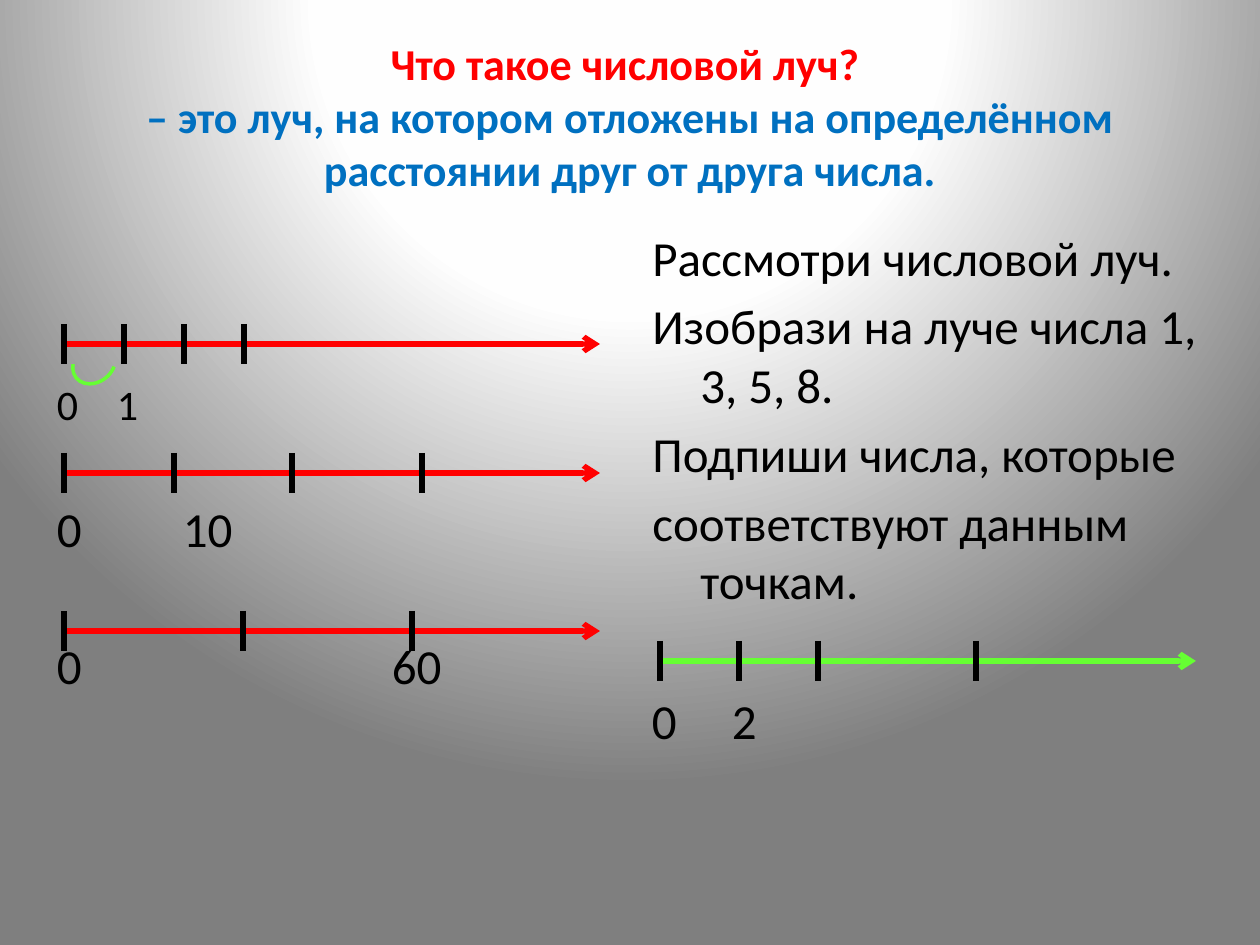
from lxml.etree import SubElement
from pptx import Presentation
from pptx.dml.color import RGBColor
from pptx.enum.shapes import MSO_CONNECTOR, MSO_SHAPE
from pptx.enum.text import MSO_ANCHOR, PP_ALIGN
from pptx.oxml import parse_xml
from pptx.oxml.ns import nsdecls, qn
from pptx.util import Emu, Pt

RED = RGBColor(0xFF, 0x00, 0x00)
BLUE = RGBColor(0x00, 0x70, 0xC0)
GREEN = RGBColor(0x66, 0xFF, 0x33)
BLACK = RGBColor(0x00, 0x00, 0x00)
FONT = "Calibri"
TICK = 20  # half the height of a tick


def px(n):
    return Emu(round(n * 914400 / 126))


class Board:
    """The current slide and its style."""

    def __init__(self, prs):
        self.s = prs.slides.add_slide(prs.slide_layouts[5])

    def background(self, stops):
        self.s.background.fill.gradient()
        old = self.s.element.find(".//" + qn("a:gradFill"))
        gs = "".join(f'<a:gs pos="{pos * 1000}"><a:srgbClr val="{c}"/></a:gs>'
                     for pos, c in stops)
        new = parse_xml(
            f'<a:gradFill {nsdecls("a")} rotWithShape="1"><a:gsLst>{gs}</a:gsLst>'
            '<a:path path="circle"><a:fillToRect l="50000" t="-80000"'
            ' r="50000" b="180000"/></a:path></a:gradFill>')
        old.getparent().replace(old, new)

    def style(self, r, size, color=BLACK, bold=False):
        r.font.name, r.font.size, r.font.bold = FONT, Pt(size), bold
        r.font.color.rgb = color

    def title(self, x, y, w, h, text, size, colors):
        sp = self.s.shapes.title
        sp.left, sp.top, sp.width, sp.height = map(px, (x, y, w, h))
        tf = sp.text_frame
        tf.word_wrap, tf.vertical_anchor = True, MSO_ANCHOR.MIDDLE
        p = tf.paragraphs[0]
        p.text = text
        p.alignment = PP_ALIGN.CENTER
        for r, color in zip(p.runs, colors):
            self.style(r, size, color, True)

    def paragraphs(self, x, y, w, h, lines, size):
        tf = self.s.shapes.add_textbox(*map(px, (x, y, w, h))).text_frame
        tf.word_wrap = True
        tf.text = "\n".join(lines)
        for i, p in enumerate(tf.paragraphs):
            pPr = p._p.get_or_add_pPr()
            pPr.set("marL", str(px(48)))
            pPr.set("indent", str(-px(48)))
            p.space_before = Pt(size * 0.2 if i else 0)
            self.style(p.runs[0], size)

    def label(self, x, mid, text, size):
        h = 60
        tf = self.s.shapes.add_textbox(px(x), px(mid - h / 2), px(60), px(h)).text_frame
        tf.margin_left = tf.margin_right = tf.margin_top = tf.margin_bottom = 0
        tf.word_wrap, tf.vertical_anchor = True, MSO_ANCHOR.MIDDLE
        tf.text = text
        self.style(tf.paragraphs[0].runs[0], size)

    def line(self, x1, y1, x2, y2, color, arrow=False):
        c = self.s.shapes.add_connector(
            MSO_CONNECTOR.STRAIGHT, *map(px, (x1, y1, x2, y2)))
        c.line.color.rgb, c.line.width = color, Pt(3)
        if arrow:
            SubElement(c.line._get_or_add_ln(), qn("a:tailEnd"), type="arrow")
        SubElement(c._element.spPr, qn("a:effectLst"))

    def ray(self, x, y, color, ticks):
        self.line(x, y, x + 536, y, color, arrow=True)
        for dx in ticks:
            self.line(x + dx, y - TICK, x + dx, y + TICK, BLACK)

    def arc(self, x, y, w, h, color):
        sp = self.s.shapes.add_shape(MSO_SHAPE.ARC, *map(px, (x, y, w, h)))
        sp.adjustments[0], sp.adjustments[1] = 136.36, 21.92
        sp.rotation = 141.6
        sp.shadow.inherit = False
        sp.fill.background()
        sp.line.color.rgb, sp.line.width = color, Pt(2)


def main():
    prs = Presentation()
    prs.slide_width, prs.slide_height = px(1260), px(945)
    b = Board(prs)
    b.background([(0, "FFFFFF"), (40, "FEFEFE"), (100, "7F7F7F")])

    # Heading and definition
    b.title(63, 38, 1134, 156,
            "Что такое числовой луч? \v– это луч, на котором отложены "
            "на определённом расстоянии друг от друга числа.", 25.2, (RED, BLUE))

    # Tasks
    b.paragraphs(640, 221, 595, 400, [
        "Рассмотри числовой луч.",
        "Изобрази на луче числа 1, 3, 5, 8.",
        "Подпиши числа, которые",
        "соответствуют данным точкам.",
    ], 28)

    # Number rays: start, colour, tick offsets
    for x, y, color, ticks in [
        (64, 344, RED, range(0, 181, 60)),
        (64, 473, RED, (0, 110, 228, 358)),
        (64, 631, RED, (0, 179, 348)),
        (660, 661, GREEN, [79 * n for n in (0, 1, 2, 4)]),
    ]:
        b.ray(x, y, color, ticks)
    b.arc(71, 345, 46, 37, GREEN)

    # Numbers under the rays: middle, size, (left, number) pairs
    for mid, size, numbers in [
        (404, 24, [(57, "0"), (117, "1")]),
        (528, 28, [(57, "0"), (183, "10")]),
        (665, 28, [(57, "0"), (392, "60")]),
        (720, 28, [(652, "0"), (732, "2")]),
    ]:
        for x, text in numbers:
            b.label(x, mid, text, size)

    prs.save("out.pptx")


if __name__ == "__main__":
    main()
